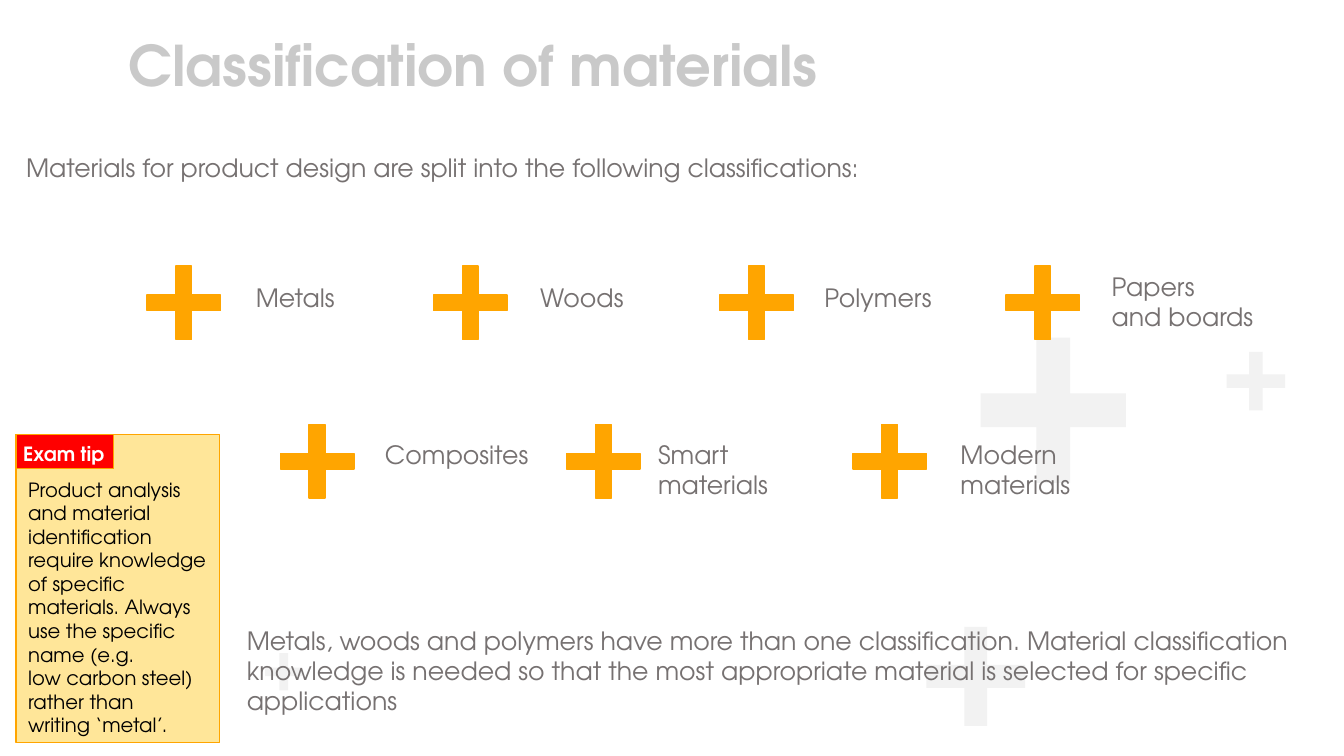
from dataclasses import dataclass

import pptx
import pptx.dml.color
import pptx.enum.shapes
import pptx.enum.text
import pptx.util

Pt = pptx.util.Pt
Kind = pptx.enum.shapes.MSO_SHAPE
FONT = "TeX Gyre Adventor"
GREY, PALE, ORANGE = "767171", "F2F2F2", "FFA500"


@dataclass
class Plus:
    left: float
    top: float
    size: float
    fill: str = PALE
    line: str | None = None
    arm: float = 0.384


@dataclass
class Panel:
    left: float
    top: float
    width: float
    height: float
    fill: str


@dataclass
class Label:
    left: float
    top: float
    width: float
    height: float
    lines: list[str]
    size: float = 18
    color: str = GREY
    bold: bool = False


GHOSTS = [
    Plus(700.5, 241.2, 103.7),
    Plus(661.7, 447.8, 70.6),
    Plus(876.2, 251.3, 41.8),
    Plus(189.4, 466.6, 26.6),
]
STEP = 204.5
ROWS = [(105.1, 190.1, 4), (200.2, 303.1, 3)]
MARKS = [
    Plus(left + i * STEP, top, 52.6, ORANGE, ORANGE, 0.393)
    for left, top, count in ROWS
    for i in range(count)
]
INTRO = [
    Label(85, 18, 762.5, 55.4, ["Classification of materials"], 40, "C9C9C9", True),
    Label(11.5, 105.1, 792.7, 36,
          ["Materials for product design are split into the following classifications:"]),
]
NAMES = [
    Label(left, top, 166, 52, lines)
    for left, top, lines in [
        (175.7, 198, ["Metals"]),
        (378.7, 198, ["Woods"]),
        (581.8, 198, ["Polymers"]),
        (787, 190.1, ["Papers", "and boards"]),
        (267.8, 310.3, ["Composites"]),
        (463, 310.3, ["Smart", "materials"]),
        (679, 310.3, ["Modern", "materials"]),
    ]
]
PANELS = [
    Panel(11.5, 310.3, 145.4, 220.3, "FFE699"),
    Panel(11.5, 310.3, 69.8, 24.5, "FF0000"),
]
NOTES = [
    Label(9.4, 311.8, 80.6, 24.5, ["Exam tip"], 14, "FFFFFF", True),
    Label(13, 337.7, 144.7, 193.7, [
        "Product analysis and material",
        "identification require knowledge",
        "of specific materials. Always",
        "use the specific name (e.g.",
        "low carbon steel) rather than",
        "writing ‘metal’.",
    ], 14, "000000"),
    Label(169.2, 442.8, 790, 90, [
        "Metals, woods and polymers have more than one classification. "
        "Material classification knowledge is needed so that the most "
        "appropriate material is selected for specific applications",
    ]),
]


def rgb(code: str) -> pptx.dml.color.RGBColor:
    return pptx.dml.color.RGBColor.from_string(code)


def paint(shape, fill: str, line: str | None) -> None:
    shape.shadow.inherit = False
    shape.fill.solid()
    shape.fill.fore_color.rgb = rgb(fill)
    if line:
        shape.line.color.rgb = rgb(line)
        shape.line.width = Pt(1)
    else:
        shape.line.fill.background()


def draw_plus(slide, plus: Plus) -> None:
    shape = slide.shapes.add_shape(
        Kind.CROSS, Pt(plus.left), Pt(plus.top), Pt(plus.size), Pt(plus.size))
    shape.adjustments[0] = plus.arm
    paint(shape, plus.fill, plus.line)


def draw_panel(slide, panel: Panel) -> None:
    shape = slide.shapes.add_shape(
        Kind.RECTANGLE, Pt(panel.left), Pt(panel.top), Pt(panel.width), Pt(panel.height))
    paint(shape, panel.fill, ORANGE)


def draw_label(slide, label: Label) -> None:
    box = slide.shapes.add_textbox(
        Pt(label.left), Pt(label.top), Pt(label.width), Pt(label.height))
    frame = box.text_frame
    frame.word_wrap = True
    frame.vertical_anchor = pptx.enum.text.MSO_ANCHOR.TOP
    frame.text = "\n".join(label.lines)
    for para in frame.paragraphs:
        para.font.name = FONT
        para.font.size = Pt(label.size)
        para.font.bold = label.bold
        para.font.color.rgb = rgb(label.color)


def main() -> None:
    deck = pptx.Presentation()
    deck.slide_width, deck.slide_height = Pt(960), Pt(540)
    slide = deck.slides.add_slide(deck.slide_layouts[6])
    for plus in GHOSTS + MARKS:
        draw_plus(slide, plus)
    for label in INTRO + NAMES:
        draw_label(slide, label)
    for panel in PANELS:
        draw_panel(slide, panel)
    for label in NOTES:
        draw_label(slide, label)
    deck.save("out.pptx")


if __name__ == "__main__":
    main()
